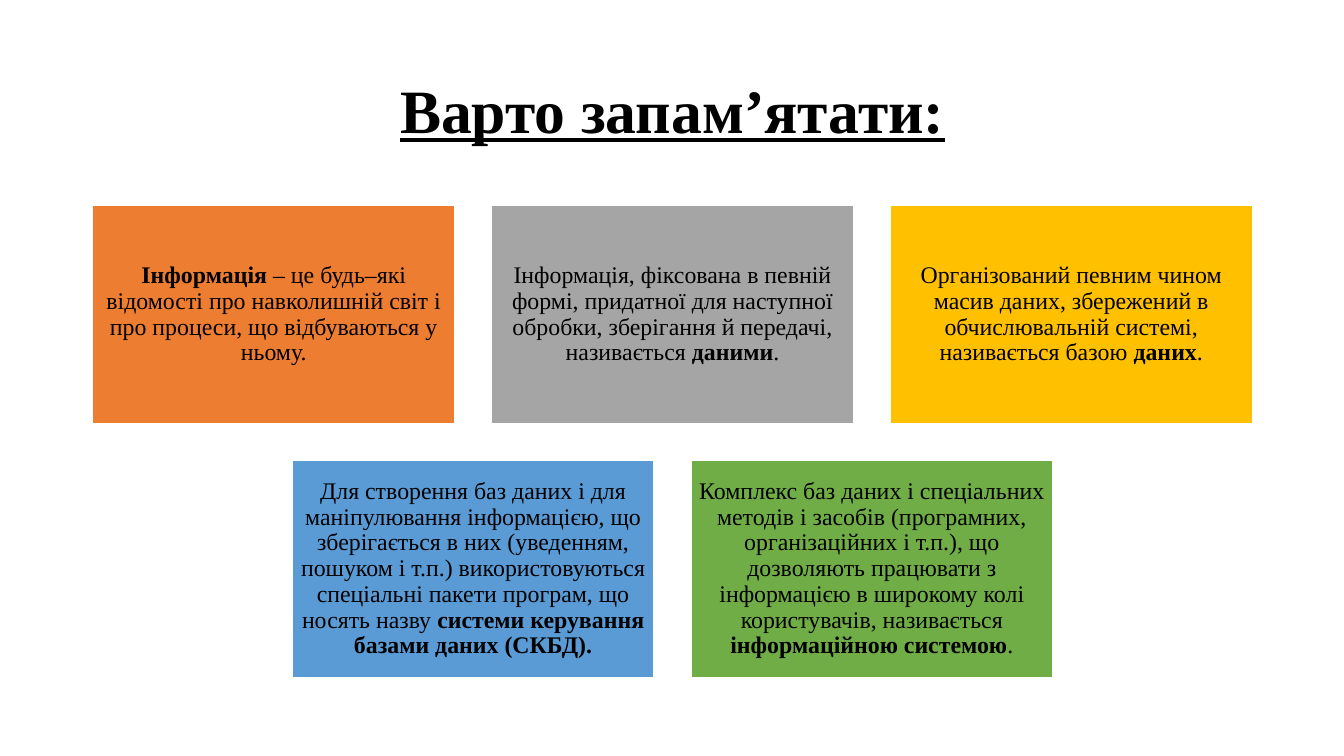
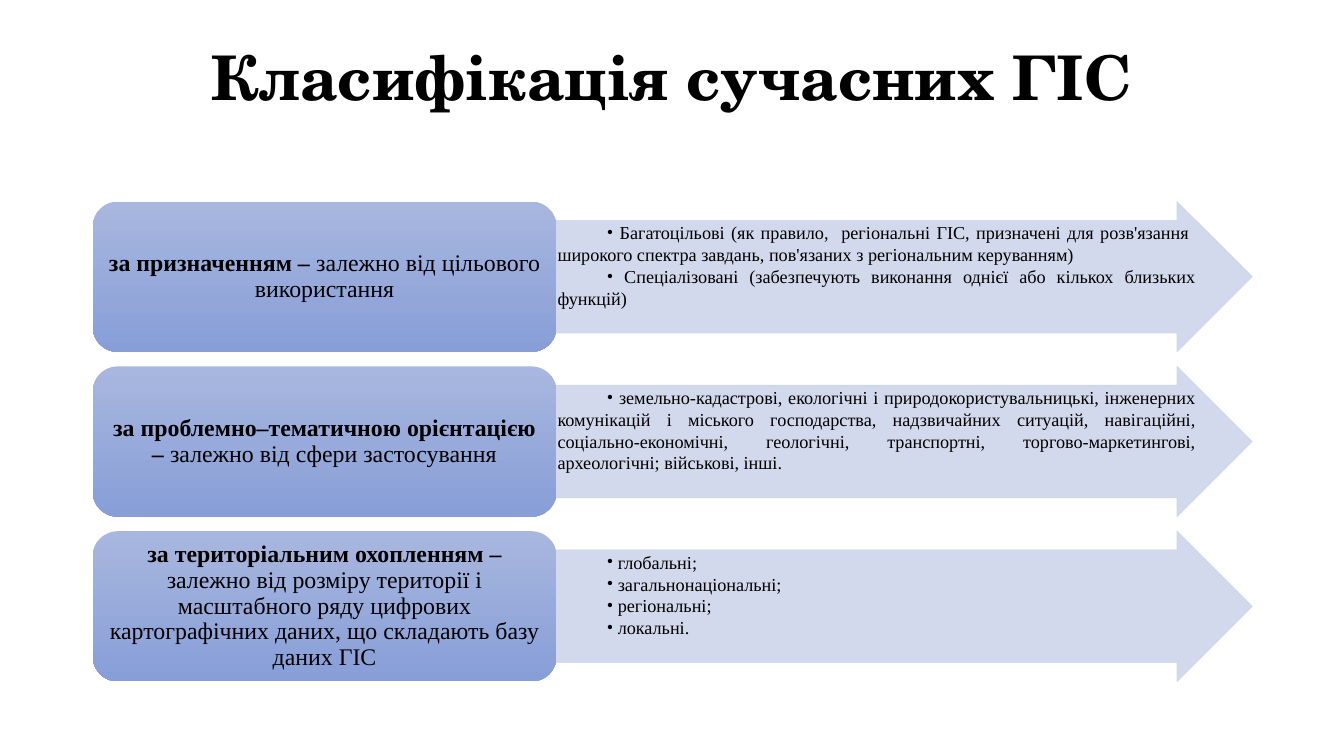
from lxml.etree import SubElement
from pptx import Presentation
from pptx.dml.color import RGBColor
from pptx.enum.shapes import MSO_SHAPE as Preset
from pptx.enum.text import MSO_ANCHOR as Anchor, PP_ALIGN as Align
from pptx.oxml.ns import qn
from pptx.util import Inches, Pt

SERIF = "Times New Roman"
BLACK, WHITE, ARROW = "000000", "FFFFFF", "CFD5EA"
LABEL_GRADIENT = ("A8B7DF", "889ED7")

DEFINITIONS = [
    [
        ("ED7D31", [("Інформація ", "b"),
                    ("– це будь–які відомості про навколишній світ і про процеси, "
                     "що відбуваються у ньому.", "")]),
        ("A5A5A5", [("Інформація, фіксована в певній формі, придатної для наступної "
                     "обробки, зберігання й передачі, називається ", ""),
                    ("даними", "b"), (".", "")]),
        ("FFC000", [("Організований певним чином масив даних, збережений в "
                     "обчислювальній системі, називається базою ", ""),
                    ("даних", "b"), (".", "")]),
    ],
    [
        ("5B9BD5", [("Для створення баз даних і для маніпулювання інформацією, що "
                     "зберігається в них (уведенням, пошуком і т.п.) використовуються "
                     "спеціальні пакети програм, що носять назву ", ""),
                    ("системи керування базами даних (СКБД).", "b")]),
        ("70AD47", [("Комплекс баз даних і спеціальних методів і засобів (програмних, "
                     "організаційних і т.п.), що дозволяють працювати з інформацією в "
                     "широкому колі користувачів, називається ", ""),
                    ("інформаційною системою", "b"), (".", "")]),
    ],
]

CLASSES = [
    ("за призначенням", "залежно від цільового використання",
     ["Багатоцільові (як правило,  регіональні ГІС, призначені для розв'язання  "
      "широкого спектра завдань, пов'язаних з регіональним керуванням)",
      "Спеціалізовані (забезпечують виконання однієї або кількох близьких функцій)"]),
    ("за проблемно–тематичною орієнтацією", "залежно від сфери застосування",
     ["земельно-кадастрові, екологічні і природокористувальницькі, інженерних "
      "комунікацій і міського господарства, надзвичайних "
      "ситуацій, навігаційні, соціально-економічні, геологічні, транспортні, "
      "торгово-маркетингові, археологічні; військові, інші."]),
    ("за територіальним охопленням",
     "залежно від розміру території і масштабного ряду цифрових картографічних "
     "даних, що складають базу даних ГІС",
     ["глобальні;", "загальнонаціональні;", "регіональні;", "локальні."]),
]

LEFT, CONTENT_WIDTH = 0.92, 11.5
CARD_TOP, CARD_WIDTH, CARD_HEIGHT = 2.04, 3.59, 2.16
CARD_GAP = (CONTENT_WIDTH - 3 * CARD_WIDTH) / 2
CLASS_TOP, CLASS_HEIGHT, CLASS_STEP, LABEL_WIDTH = 2, 1.49, 1.635, 4.6


def color(value):
    return RGBColor.from_string(value)


def set_bullet(paragraph, first_line):
    properties = paragraph._p.get_or_add_pPr()
    properties.set("marL", "0")
    properties.set("indent", str(Inches(first_line)))
    SubElement(properties, qn("a:buFont")).set("typeface", SERIF)
    SubElement(properties, qn("a:buChar")).set("char", "•")


def set_text(shape, paragraphs, size=17, font=SERIF, align=Align.CENTER, anchor=Anchor.MIDDLE,
             spacing=0.9, insets=(0.07, 0.07), bullet_at=None):
    frame = shape.text_frame
    frame.word_wrap = True
    frame.vertical_anchor = anchor
    frame.margin_left = frame.margin_right = Inches(insets[0])
    frame.margin_top = frame.margin_bottom = Inches(insets[1])
    for index, runs in enumerate(paragraphs):
        paragraph = frame.add_paragraph() if index else frame.paragraphs[0]
        if bullet_at is not None:
            set_bullet(paragraph, bullet_at)
        paragraph.alignment = align
        paragraph.line_spacing = spacing
        for text, style in runs:
            run = paragraph.add_run()
            run.text = text
            run.font.name, run.font.size = font, Pt(size)
            run.font.bold, run.font.italic = "b" in style, "i" in style
            run.font.underline = "u" in style
            run.font.color.rgb = color(BLACK)


def add_preset(slide, preset, left, top, width, height, fill, line=None, line_width=1, alpha=None):
    shape = slide.shapes.add_shape(preset, Inches(left), Inches(top), Inches(width), Inches(height))
    shape.shadow.inherit = False
    if isinstance(fill, tuple):
        shape.fill.gradient()
        shape.fill.gradient_angle = 270
        for stop, value in zip(shape.fill.gradient_stops, fill):
            stop.color.rgb = color(value)
    else:
        shape.fill.solid()
        shape.fill.fore_color.rgb = color(fill)
    if line:
        shape.line.color.rgb = color(line)
        shape.line.width = Pt(line_width)
    else:
        shape.line.fill.background()
    if alpha:
        for node in shape._element.spPr.iter(qn("a:srgbClr")):
            SubElement(node, qn("a:alpha")).set("val", str(alpha * 1000))
    return shape


def add_slide(presentation, title, top=0.4, font=SERIF, style="b"):
    slide = presentation.slides.add_slide(presentation.slide_layouts[6])
    box = slide.shapes.add_textbox(Inches(LEFT), Inches(top), Inches(CONTENT_WIDTH), Inches(1.45))
    set_text(box, [[(title, style)]], size=44, font=font, insets=(0.1, 0.05))
    return slide


def build_definitions(presentation):
    slide = add_slide(presentation, "Варто запам’ятати:", style="bu")
    step = CARD_WIDTH + CARD_GAP
    for row, cards in enumerate(DEFINITIONS):
        row_left = LEFT + (3 - len(cards)) * step / 2
        top = CARD_TOP + row * (CARD_HEIGHT + CARD_GAP)
        for column, (fill, runs) in enumerate(cards):
            card = add_preset(slide, Preset.RECTANGLE, row_left + column * step, top,
                              CARD_WIDTH, CARD_HEIGHT, fill, line=WHITE)
            set_text(card, [runs])


def build_classes(presentation):
    slide = add_slide(presentation, "Класифікація сучасних ГІС", top=0.07, font="TeX Gyre Schola")
    for index, (name, basis, items) in enumerate(CLASSES):
        top = CLASS_TOP + index * CLASS_STEP
        arrow = add_preset(slide, Preset.RIGHT_ARROW, LEFT + LABEL_WIDTH, top,
                           CONTENT_WIDTH - LABEL_WIDTH, CLASS_HEIGHT, ARROW,
                           line=ARROW, line_width=0.5, alpha=90)
        arrow.adjustments[0] = 0.75
        set_text(arrow, [[(" " + item, "")] for item in items], size=13, align=Align.JUSTIFY,
                 anchor=Anchor.TOP, spacing=1.0, insets=(0.01, 0.01), bullet_at=0.49)
        label = add_preset(slide, Preset.ROUNDED_RECTANGLE, LEFT, top,
                           LABEL_WIDTH, CLASS_HEIGHT, LABEL_GRADIENT)
        set_text(label, [[(name, "b"), (" – ", "bi"), (basis, "")]], insets=(0.07, 0.04))


def main():
    """Build the slides on key definitions and on GIS classification."""
    presentation = Presentation()
    presentation.slide_width, presentation.slide_height = Inches(13.33), Inches(7.5)
    build_definitions(presentation)
    build_classes(presentation)
    presentation.save("out.pptx")


if __name__ == "__main__":
    main()
